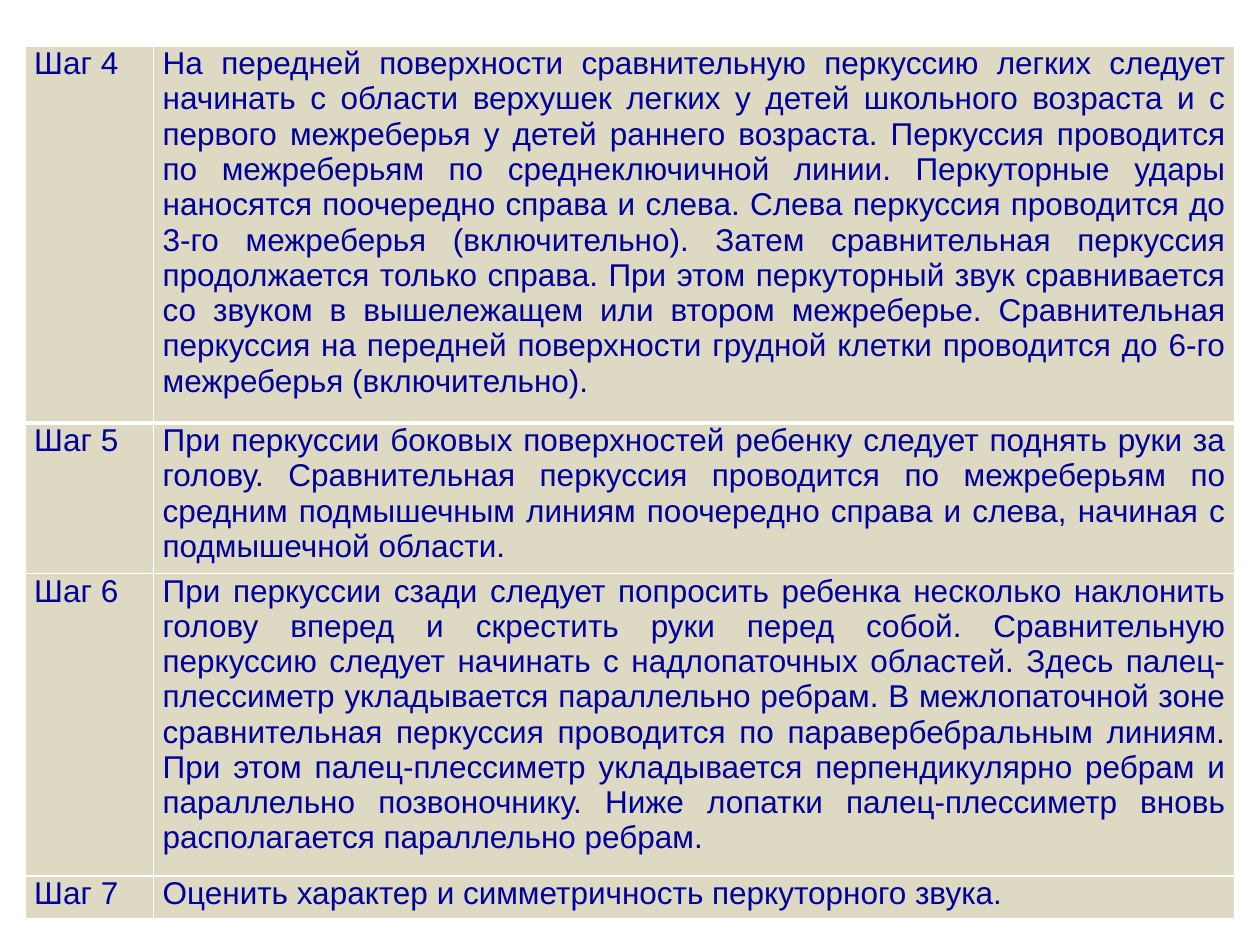
"""Build a slide with a table of lung percussion steps."""
from dataclasses import dataclass

import pptx
import pptx.dml.color
import pptx.enum.text
import pptx.oxml
import pptx.oxml.ns
import pptx.util
from pptx.util import Cm


@dataclass(frozen=True)
class Theme:
    font: str = "Arial"
    size: int = 18
    text: str = "00009A"
    fill: str = "DDD9C3"
    border: str = "FFFFFF"
    thin: int = 1
    thick: int = 3


THEME = Theme()
COLS = (2.59, 21.81)
STEPS = (
    ("Шаг 4", 7.6,
     "На передней поверхности сравнительную перкуссию легких следует начинать с "
     "области верхушек легких у детей школьного возраста и с первого межреберья у "
     "детей раннего возраста. Перкуссия проводится по межреберьям по "
     "среднеключичной линии. Перкуторные удары наносятся поочередно справа и слева. "
     "Слева перкуссия проводится до 3-го межреберья (включительно). Затем "
     "сравнительная перкуссия продолжается только справа. При этом перкуторный звук "
     "сравнивается со звуком в вышележащем или втором межреберье. Сравнительная "
     "перкуссия на передней поверхности грудной клетки проводится до 6-го "
     "межреберья (включительно)."),
    ("Шаг 5", 3.03,
     "При перкуссии боковых поверхностей ребенку следует поднять руки за голову. "
     "Сравнительная перкуссия проводится по межреберьям по средним подмышечным "
     "линиям поочередно справа и слева, начиная с подмышечной области."),
    ("Шаг 6", 6.1,
     "При перкуссии сзади следует попросить ребенка несколько наклонить голову "
     "вперед и скрестить руки перед собой. Сравнительную перкуссию следует начинать "
     "с надлопаточных областей. Здесь палец-плессиметр укладывается параллельно "
     "ребрам. В межлопаточной зоне сравнительная перкуссия проводится по "
     "паравербебральным линиям. При этом палец-плессиметр укладывается "
     "перпендикулярно ребрам и параллельно позвоночнику. Ниже лопатки "
     "палец-плессиметр вновь располагается параллельно ребрам."),
    ("Шаг 7", 0.87, "Оценить характер и симметричность перкуторного звука."),
)


def rgb(value):
    return pptx.dml.color.RGBColor.from_string(value)


def set_borders(cell, widths):
    tcPr = cell._tc.get_or_add_tcPr()
    for i, (side, width) in enumerate(widths.items()):
        ln = pptx.oxml.parse_xml(
            f'<a:{side} {pptx.oxml.ns.nsdecls("a")} w="{pptx.util.Pt(width)}">'
            f'<a:solidFill><a:srgbClr val="{THEME.border}"/></a:solidFill></a:{side}>')
        tcPr.insert(i, ln)


def fill_cell(cell, text, top, bottom):
    cell.margin_left = cell.margin_right = Cm(0.19)
    cell.margin_top = cell.margin_bottom = 0
    cell.fill.solid()
    cell.fill.fore_color.rgb = rgb(THEME.fill)
    set_borders(cell, {"lnL": THEME.thin, "lnR": THEME.thin, "lnT": top, "lnB": bottom})
    p = cell.text_frame.paragraphs[0]
    p.alignment = pptx.enum.text.PP_ALIGN.JUSTIFY
    r = p.add_run()
    r.text = text
    r.font.name = THEME.font
    r.font.size = pptx.util.Pt(THEME.size)
    r.font.color.rgb = rgb(THEME.text)


def add_steps(s):
    height = sum(h for _, h, _ in STEPS)
    tbl = s.shapes.add_table(len(STEPS), len(COLS), Cm(0.5), Cm(0.93),
                             Cm(sum(COLS)), Cm(height)).table
    tbl.first_row = tbl.horz_banding = False
    for col, width in zip(tbl.columns, COLS):
        col.width = Cm(width)
    for i, (label, h, text) in enumerate(STEPS):
        tbl.rows[i].height = Cm(h)
        top = THEME.thick if i == 1 else THEME.thin
        bottom = THEME.thick if i == 0 else THEME.thin
        for j, content in enumerate((label, text)):
            fill_cell(tbl.cell(i, j), content, top, bottom)


def main():
    prs = pptx.Presentation()
    prs.slide_width, prs.slide_height = Cm(25.4), Cm(19.05)
    s = prs.slides.add_slide(prs.slide_layouts[6])
    add_steps(s)
    prs.save("out.pptx")


if __name__ == "__main__":
    main()
